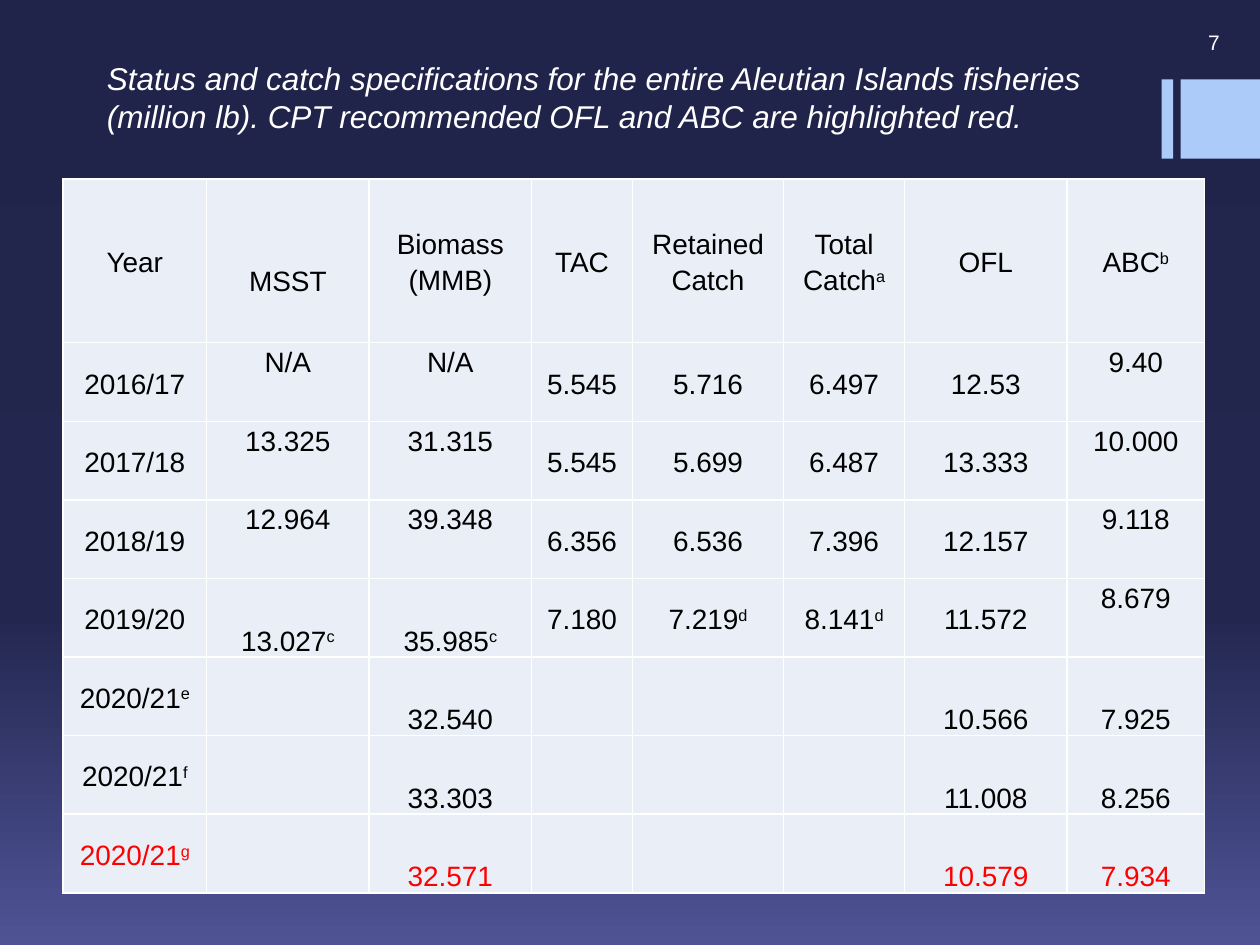
from lxml.etree import SubElement
from pptx import Presentation
from pptx.dml.color import RGBColor
from pptx.enum.shapes import MSO_SHAPE
from pptx.enum.text import MSO_ANCHOR, MSO_AUTO_SIZE, PP_ALIGN
from pptx.oxml.ns import qn
from pptx.util import Inches, Pt

WHITE = RGBColor(0xFF, 0xFF, 0xFF)
BLACK = RGBColor(0x00, 0x00, 0x00)
RED = RGBColor(0xFF, 0x00, 0x00)
SKY = RGBColor(0xAC, 0xCB, 0xF9)
PALE = RGBColor(0xEA, 0xEF, 0xF7)
DUSK = [(0, RGBColor(0x21, 0x24, 0x4A)),
        (65, RGBColor(0x23, 0x27, 0x50)),
        (100, RGBColor(0x4F, 0x53, 0x95))]

# The slide is a grid of 100 columns by 75 rows
WIDE, HIGH = Inches(10), Inches(7.5)
COL, ROW = WIDE // 100, HIGH // 75

TITLE = ("Status and catch specifications for the entire Aleutian Islands "
         "fisheries (million lb). CPT recommended OFL and ABC are "
         "highlighted red.")

# A caret starts a superscript
DATA = [
    ["Year", "MSST", "Biomass (MMB)", "TAC", "Retained Catch",
     "Total Catch^a", "OFL", "ABC^b"],
    ["2016/17", "N/A", "N/A", "5.545", "5.716", "6.497", "12.53", "9.40"],
    ["2017/18", "13.325", "31.315", "5.545", "5.699", "6.487", "13.333",
     "10.000"],
    ["2018/19", "12.964", "39.348", "6.356", "6.536", "7.396", "12.157",
     "9.118"],
    ["2019/20", "13.027^c", "35.985^c", "7.180", "7.219^d", "8.141^d",
     "11.572", "8.679"],
    ["2020/21^e", "", "32.540", "", "", "", "10.566", "7.925"],
    ["2020/21^f", "", "33.303", "", "", "", "11.008", "8.256"],
    ["2020/21^g", "", "32.571", "", "", "", "10.579", "7.934"],
]
# Anchor of each cell, one letter a column
SEATS = ["mmmmmmmm"] + ["mttmmmmt"] * 3 + ["mbbmmmmt"] + ["mbbmmmbb"] * 3
ANCHOR = {"t": MSO_ANCHOR.TOP, "m": MSO_ANCHOR.MIDDLE, "b": MSO_ANCHOR.BOTTOM}
COLS = [11.4, 12.9, 12.9, 8, 12, 9.6, 12.9, 10.9]
ROWS = [13] + [6.24] * 7

FRAME = {"word_wrap": True}
CELL = {"margin_left": Inches(0.07), "margin_right": Inches(0.07),
        "margin_top": 0, "margin_bottom": 0}
FONT = {"name": "Arial", "size": Pt(16)}
PARA = {"alignment": PP_ALIGN.CENTER, "line_spacing": 1.15}


def apply(item, form):
    for key, value in form.items():
        setattr(item, key, value)


def place(left, top, width, height):
    return [int(n) for n in (left * COL, top * ROW, width * COL, height * ROW)]


def write(frame, text, font, para):
    line = frame.paragraphs[0]
    apply(line, para)
    for rank, part in enumerate(text.split("^")):
        run = line.add_run()
        run.text = part
        look = dict(font)
        run.font.color.rgb = look.pop("color")
        apply(run.font, look)
        if rank:
            run.font._element.set("baseline", "30000")


def add_back(slide):
    fill = slide.background.fill
    fill.gradient()
    fill.gradient_angle = 270
    stops = slide.element.find(".//" + qn("a:gsLst"))
    for stop in list(stops):
        stops.remove(stop)
    for share, color in DUSK:
        stop = SubElement(stops, qn("a:gs"), pos=str(share * 1000))
        SubElement(stop, qn("a:srgbClr"), val=str(color))


def add_bar(slide, *box):
    bar = slide.shapes.add_shape(MSO_SHAPE.RECTANGLE, *place(*box))
    bar.shadow.inherit = False
    bar.fill.solid()
    bar.fill.fore_color.rgb = SKY
    bar.line.fill.background()


def add_text(slide, box, text, frame, font, para):
    body = slide.shapes.add_textbox(*place(*box)).text_frame
    apply(body, {**FRAME, **frame})
    write(body, text, {**FONT, "color": WHITE, **font}, para)


def add_edge(cell):
    props = cell._tc.get_or_add_tcPr()
    for side in "LRTB":
        edge = SubElement(props, qn("a:ln" + side), w=str(Pt(1)))
        paint = SubElement(edge, qn("a:solidFill"))
        SubElement(paint, qn("a:srgbClr"), val=str(WHITE))


def fill_cell(cell, text, seat, color):
    apply(cell, {**CELL, "vertical_anchor": ANCHOR[seat]})
    add_edge(cell)
    cell.fill.solid()
    cell.fill.fore_color.rgb = PALE
    if text:
        write(cell.text_frame, text, {**FONT, "color": color}, PARA)


def add_grid(slide):
    box = place(5, 14.2, sum(COLS), sum(ROWS))
    grid = slide.shapes.add_table(len(ROWS), len(COLS), *box).table
    apply(grid, {"first_row": False, "horz_banding": False})
    for col, width in zip(grid.columns, COLS):
        col.width = int(width * COL)
    for row, height in zip(grid.rows, ROWS):
        row.height = int(height * ROW)
    for r, (texts, seats) in enumerate(zip(DATA, SEATS)):
        color = RED if r == len(DATA) - 1 else BLACK
        for c, (text, seat) in enumerate(zip(texts, seats)):
            fill_cell(grid.cell(r, c), text, seat, color)
    # The MSST heading sits half a line low
    grid.cell(0, 1).margin_top = Inches(0.29)


def main():
    deck = Presentation()
    apply(deck, {"slide_width": WIDE, "slide_height": HIGH})
    slide = deck.slides.add_slide(deck.slide_layouts[6])
    add_back(slide)

    # Corner bars
    add_bar(slide, 92.2, 6.3, 0.9, 6.3)
    add_bar(slide, 93.7, 6.3, 6.3, 6.3)

    # Page number and title
    add_text(slide, (87.5, 1.7, 10.3, 3.3), "7",
             {"vertical_anchor": MSO_ANCHOR.MIDDLE}, {"size": Pt(12)},
             {"alignment": PP_ALIGN.RIGHT})
    add_text(slide, (7.5, 4.2, 83.3, 7.1), TITLE,
             {"auto_size": MSO_AUTO_SIZE.SHAPE_TO_FIT_TEXT},
             {"size": Pt(18), "italic": True}, {})

    # Catch table
    add_grid(slide)
    deck.save("out.pptx")


if __name__ == "__main__":
    main()
